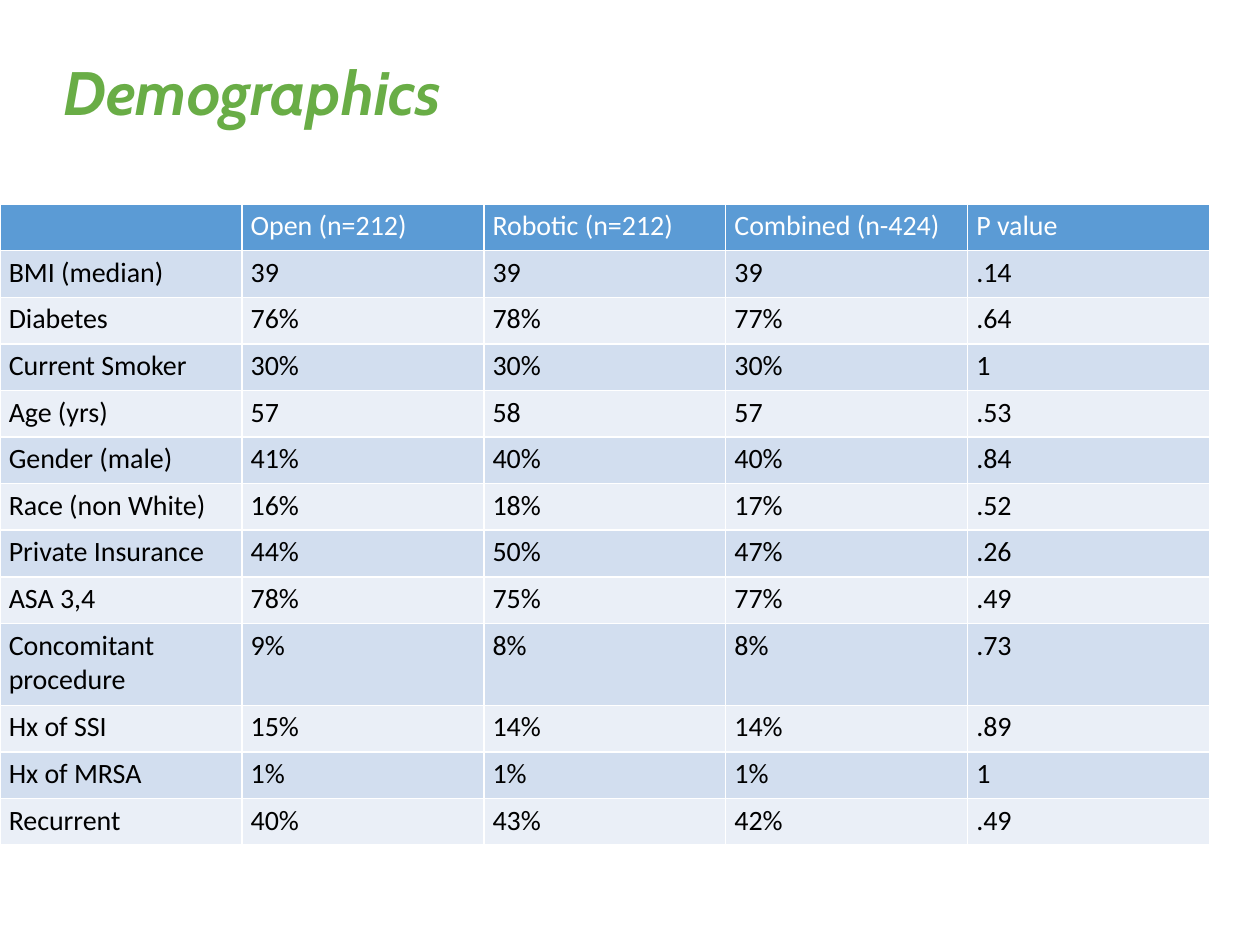
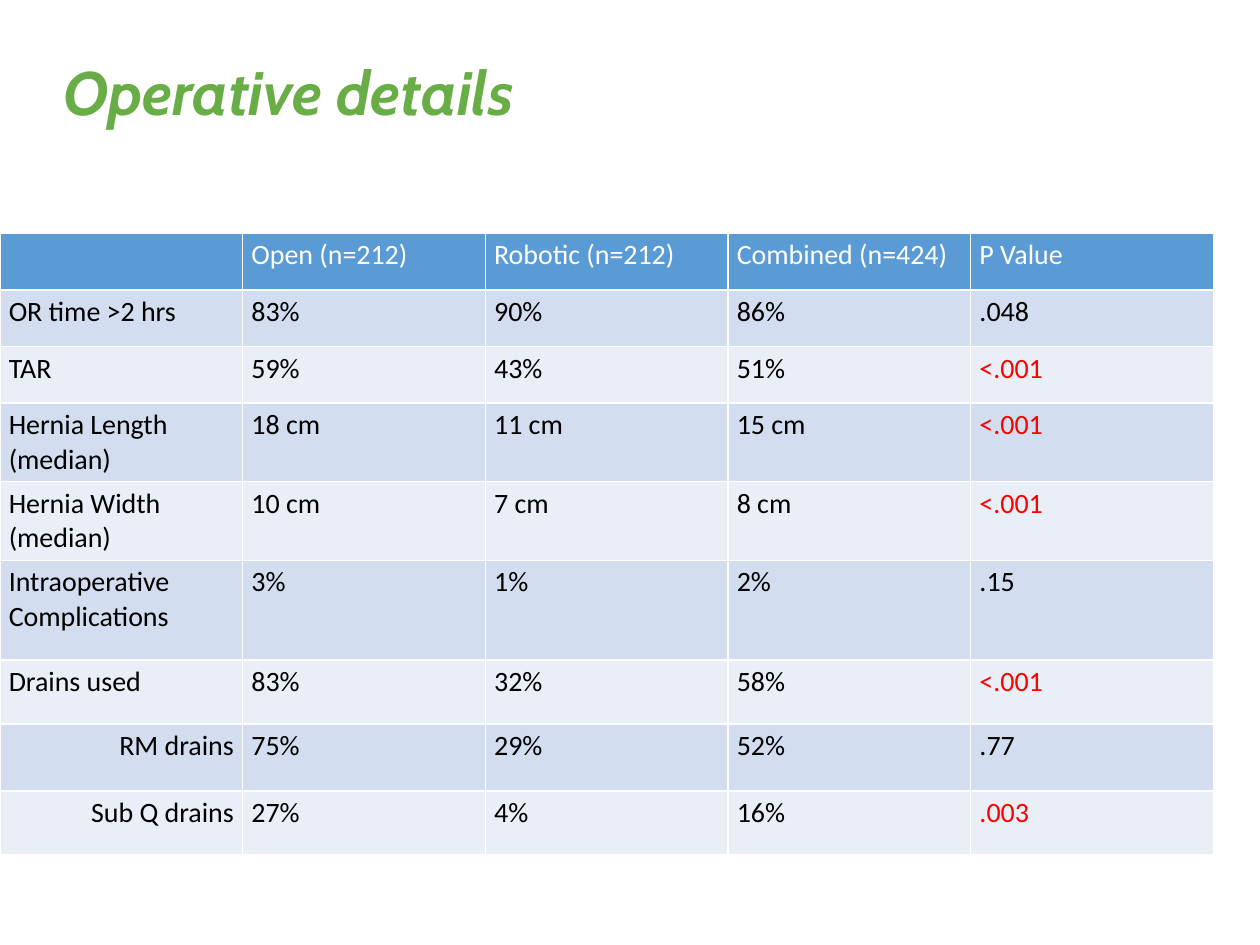
from lxml.etree import SubElement
from pptx import Presentation
from pptx.dml.color import RGBColor
from pptx.enum.text import MSO_ANCHOR, MSO_AUTO_SIZE, PP_ALIGN
from pptx.oxml.ns import qn
from pptx.util import Inches, Pt

COLORS = {
    "title": "69AD46",
    "header": "5B9BD5",
    "odd_row": "D2DEEF",
    "even_row": "EAEFF7",
    "border": "FFFFFF",
    "header_text": "FFFFFF",
    "text": "000000",
    "significant": "FF0000",
}
SIGNIFICANT = {"<.001", ".003"}
SUBGROUPS = {"RM drains", "Sub Q drains"}

demographics = [
    ["", "Open (n=212)", "Robotic (n=212)", "Combined (n-424)", "P value"],
    ["BMI (median)", "39", "39", "39", ".14"],
    ["Diabetes", "76%", "78%", "77%", ".64"],
    ["Current Smoker", "30%", "30%", "30%", "1"],
    ["Age (yrs)", "57", "58", "57", ".53"],
    ["Gender (male)", "41%", "40%", "40%", ".84"],
    ["Race (non White)", "16%", "18%", "17%", ".52"],
    ["Private Insurance", "44%", "50%", "47%", ".26"],
    ["ASA 3,4", "78%", "75%", "77%", ".49"],
    ["Concomitant procedure", "9%", "8%", "8%", ".73"],
    ["Hx of SSI", "15%", "14%", "14%", ".89"],
    ["Hx of MRSA", "1%", "1%", "1%", "1"],
    ["Recurrent", "40%", "43%", "42%", ".49"],
]
operative_details = [
    ["", "Open (n=212)", "Robotic (n=212)", "Combined (n=424)", "P Value"],
    ["OR time >2 hrs", "83%", "90%", "86%", ".048"],
    ["TAR", "59%", "43%", "51%", "<.001"],
    ["Hernia Length (median)", "18 cm", "11 cm", "15 cm", "<.001"],
    ["Hernia Width\n(median)", "10 cm", "7 cm", "8 cm", "<.001"],
    ["Intraoperative Complications", "3%", "1%", "2%", ".15"],
    ["Drains used", "83%", "32%", "58%", "<.001"],
    ["RM drains", "75%", "29%", "52%", ".77"],
    ["Sub Q drains", "27%", "4%", "16%", ".003"],
]
# Title, rows, table top, table width, row heights
SLIDES = [
    ("Demographics", demographics, 1.62, 9.6, [0.37] * 9 + [0.65] + [0.37] * 3),
    ("Operative details", operative_details, 1.85, 9.63,
     [0.45] * 3 + [0.59] * 2 + [0.79, 0.51, 0.53, 0.51]),
]


def set_font(paragraph, name, size, color, bold=False, italic=False):
    font = paragraph.font
    font.name, font.size = name, Pt(size)
    font.bold, font.italic = bold, italic
    font.color.rgb = RGBColor.from_string(COLORS[color])


def style_cell(cell, fill, color):
    """Give a cell its margins, borders, fill and text format."""
    cell.margin_left = cell.margin_right = Inches(0.07)
    cell.margin_top = cell.margin_bottom = Inches(0.04)
    properties = cell._tc.get_or_add_tcPr()
    for side in ("a:lnL", "a:lnR", "a:lnT", "a:lnB"):
        line = SubElement(properties, qn(side), w=str(Pt(1)))
        solid = SubElement(line, qn("a:solidFill"))
        SubElement(solid, qn("a:srgbClr"), val=COLORS["border"])
    cell.fill.solid()
    cell.fill.fore_color.rgb = RGBColor.from_string(COLORS[fill])
    for paragraph in cell.text_frame.paragraphs:
        set_font(paragraph, "Calibri", 16, color)
        if cell.text in SUBGROUPS:
            paragraph.alignment = PP_ALIGN.RIGHT


prs = Presentation()
prs.slide_width, prs.slide_height = Inches(10), Inches(7.5)
title_only = prs.slide_layouts[5]

for heading, rows, top, width, heights in SLIDES:
    slide = prs.slides.add_slide(title_only)

    title = slide.shapes.title
    title.left, title.top = Inches(0.5), Inches(0.5)
    title.width, title.height = Inches(9), Inches(0.5)
    frame = title.text_frame
    frame.text = heading
    frame.margin_left = frame.margin_right = 0
    frame.margin_top = frame.margin_bottom = 0
    frame.vertical_anchor = MSO_ANCHOR.TOP
    frame.auto_size = MSO_AUTO_SIZE.NONE
    frame.paragraphs[0].alignment = PP_ALIGN.LEFT
    frame.paragraphs[0].line_spacing = 0.9
    set_font(frame.paragraphs[0], "Cabin", 35, "title", bold=True, italic=True)

    table = slide.shapes.add_table(
        len(rows), len(rows[0]), 0, Inches(top), Inches(width), Inches(sum(heights))
    ).table
    for r, (values, height) in enumerate(zip(rows, heights)):
        table.rows[r].height = Inches(height)
        fill = "header" if r == 0 else "odd_row" if r % 2 else "even_row"
        for c, value in enumerate(values):
            cell = table.cell(r, c)
            cell.text = value
            color = "significant" if value in SIGNIFICANT else "text"
            style_cell(cell, fill, "header_text" if r == 0 else color)

prs.save("out.pptx")
